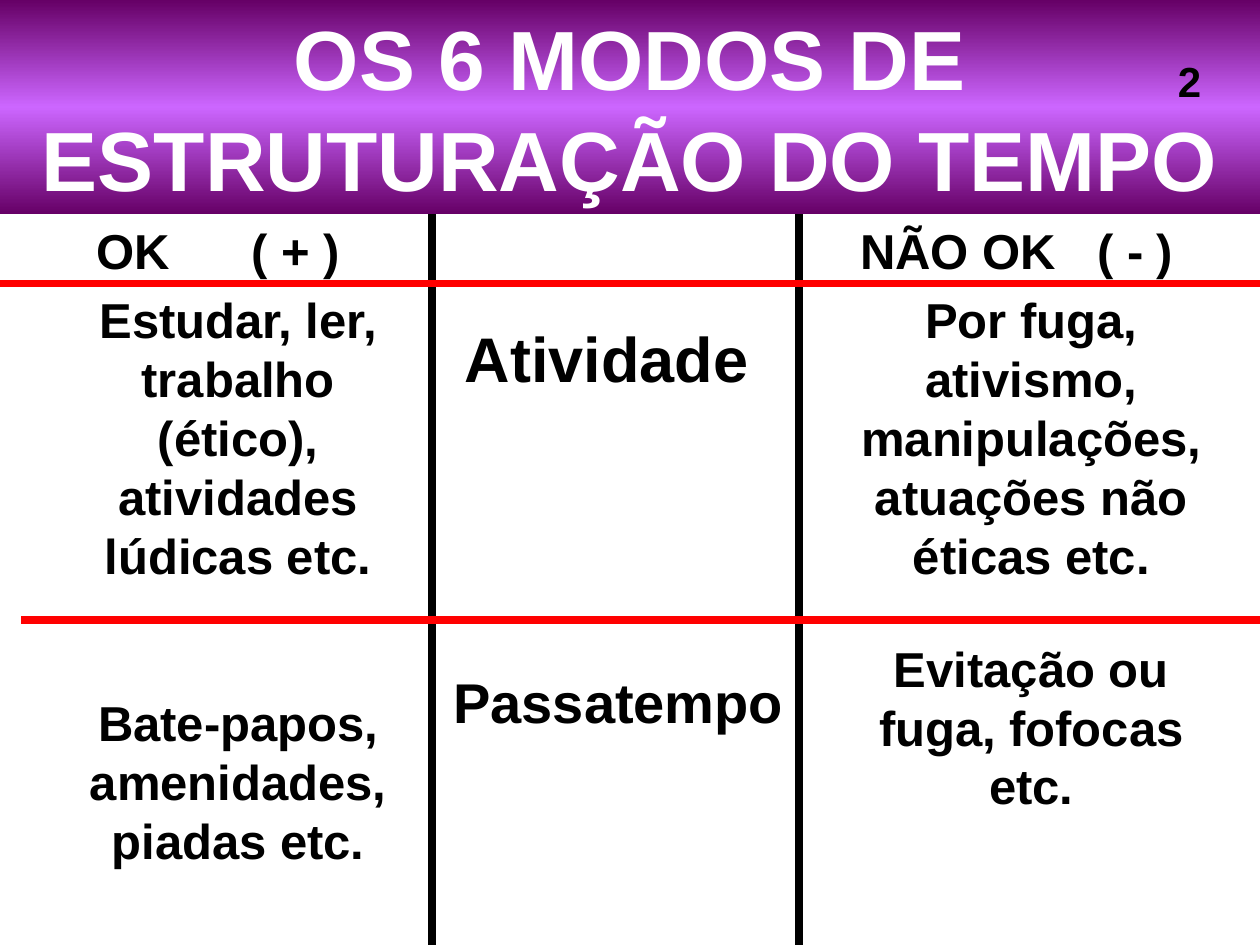
"""Builds the slide on the six ways of structuring time, with activity and pastime."""
from copy import deepcopy

from lxml import etree
from pptx import Presentation
from pptx.dml.color import RGBColor
from pptx.enum.shapes import MSO_CONNECTOR
from pptx.enum.text import MSO_ANCHOR, MSO_AUTO_SIZE, PP_ALIGN
from pptx.oxml.ns import qn
from pptx.util import Inches, Pt

STRAIGHT = MSO_CONNECTOR.STRAIGHT
TOP, MIDDLE = MSO_ANCHOR.TOP, MSO_ANCHOR.MIDDLE
NO_FIT = MSO_AUTO_SIZE.NONE
LEFT, CENTER = PP_ALIGN.LEFT, PP_ALIGN.CENTER

THEME = {
    "font": "Arial",
    "ink": "000000", "paper": "FFFFFF", "rule": "FF0000",
    "band": [(0, "660066"), (0.5, "CC66FF"), (1, "660066")],
    "title": 48, "body": 28, "number": 24, "line": 4.5,
}
WIDTH, HEIGHT = 10, 7.5
BAND_H, HEAD_Y, ROW_Y = 1.7, 2.25, 4.92
COLUMNS = (3.43, 6.34)

TITLE = "OS 6 MODOS DE ESTRUTURAÇÃO DO TEMPO"
BODIES = [
    ((0.35, HEAD_Y, 3.08, 4.96), 62,
     ["Estudar, ler, trabalho (ético), atividades lúdicas etc.",
      "Bate-papos, amenidades, piadas etc."]),
    ((6.73, HEAD_Y, 2.91, 4.96), 31,
     ["Por fuga, ativismo, manipulações, atuações não éticas etc.",
      "Evitação ou fuga, fofocas etc."]),
]
HEADERS = [(0.67, 1.23, "OK\t( + )"), (6.73, 1.88, "NÃO OK\t( - )")]
LABELS = [
    ((3.5, 5.25, 2.9, 1.4), "Passatempo", 32),
    ((3.59, 2.49, 2.51, 1.41), "Atividade", 36),
    ((9.25, 0.39, 0.47, 0.5), "2", THEME["number"]),
]
LINES = [(x, BAND_H, x, HEIGHT, THEME["ink"]) for x in COLUMNS] + [
    (0, HEAD_Y, WIDTH, HEAD_Y, THEME["rule"]),
    (0.17, ROW_Y, WIDTH, ROW_Y, THEME["rule"]),
]


def rgb(value):
    return RGBColor.from_string(value)


def place(sp, box):
    sp.left, sp.top, sp.width, sp.height = map(Inches, box)


def write(p, text, size, color=THEME["ink"], align=LEFT):
    p.alignment = align
    r = p.add_run()
    r.text = text
    r.font.name, r.font.size, r.font.bold = THEME["font"], Pt(size), True
    r.font.color.rgb = rgb(color)


def frame(sp, anchor=TOP):
    tf = sp.text_frame
    tf.word_wrap, tf.auto_size, tf.vertical_anchor = True, NO_FIT, anchor
    return tf


def fill_band(sp):
    sp.fill.gradient()
    sp.fill.gradient_angle = 90
    stops = sp._element.spPr.find(qn("a:gradFill")).find(qn("a:gsLst"))
    stops.insert(1, deepcopy(stops[0]))
    for stop, (position, color) in zip(sp.fill.gradient_stops, THEME["band"]):
        stop.position = position
        stop.color.rgb = rgb(color)


def add_title(s):
    sp = s.shapes.title
    place(sp, (0, 0, WIDTH, BAND_H))
    fill_band(sp)
    write(frame(sp, MIDDLE).paragraphs[0], TITLE, THEME["title"], THEME["paper"], CENTER)


def add_body(sp, box, gap, texts):
    place(sp, box)
    sp.fill.solid()
    sp.fill.fore_color.rgb = rgb(THEME["paper"])
    tf = frame(sp)
    for i, text in enumerate(texts):
        p = tf.add_paragraph() if i else tf.paragraphs[0]
        write(p, text, THEME["body"], align=CENTER)
        if i:
            p.space_before = Pt(gap)
        pPr = p._p.get_or_add_pPr()
        pPr.set("marL", "0")
        pPr.set("indent", "0")
        etree.SubElement(pPr, qn("a:buNone"))


def add_label(s, box, text, size):
    p = frame(s.shapes.add_textbox(*map(Inches, box))).paragraphs[0]
    write(p, text, size)
    return p


def add_header(s, x, tab, text):
    p = add_label(s, (x, BAND_H, 2.76, 0.57), text, THEME["body"])
    tabs = etree.SubElement(p._p.get_or_add_pPr(), qn("a:tabLst"))
    etree.SubElement(tabs, qn("a:tab"), pos=str(Inches(tab)), algn="l")


def add_line(s, x1, y1, x2, y2, color):
    line = s.shapes.add_connector(STRAIGHT, *map(Inches, (x1, y1, x2, y2)))
    line.line.color.rgb = rgb(color)
    line.line.width = Pt(THEME["line"])
    etree.SubElement(line._element.spPr, qn("a:effectLst"))


def main():
    prs = Presentation()
    prs.slide_width, prs.slide_height = Inches(WIDTH), Inches(HEIGHT)
    s = prs.slides.add_slide(prs.slide_layouts.get_by_name("Two Content"))
    add_title(s)
    for sp, body in zip(list(s.placeholders)[1:], BODIES):
        add_body(sp, *body)
    for label in LABELS:
        add_label(s, *label)
    for header in HEADERS:
        add_header(s, *header)
    for line in LINES:
        add_line(s, *line)
    prs.save("out.pptx")


if __name__ == "__main__":
    main()
